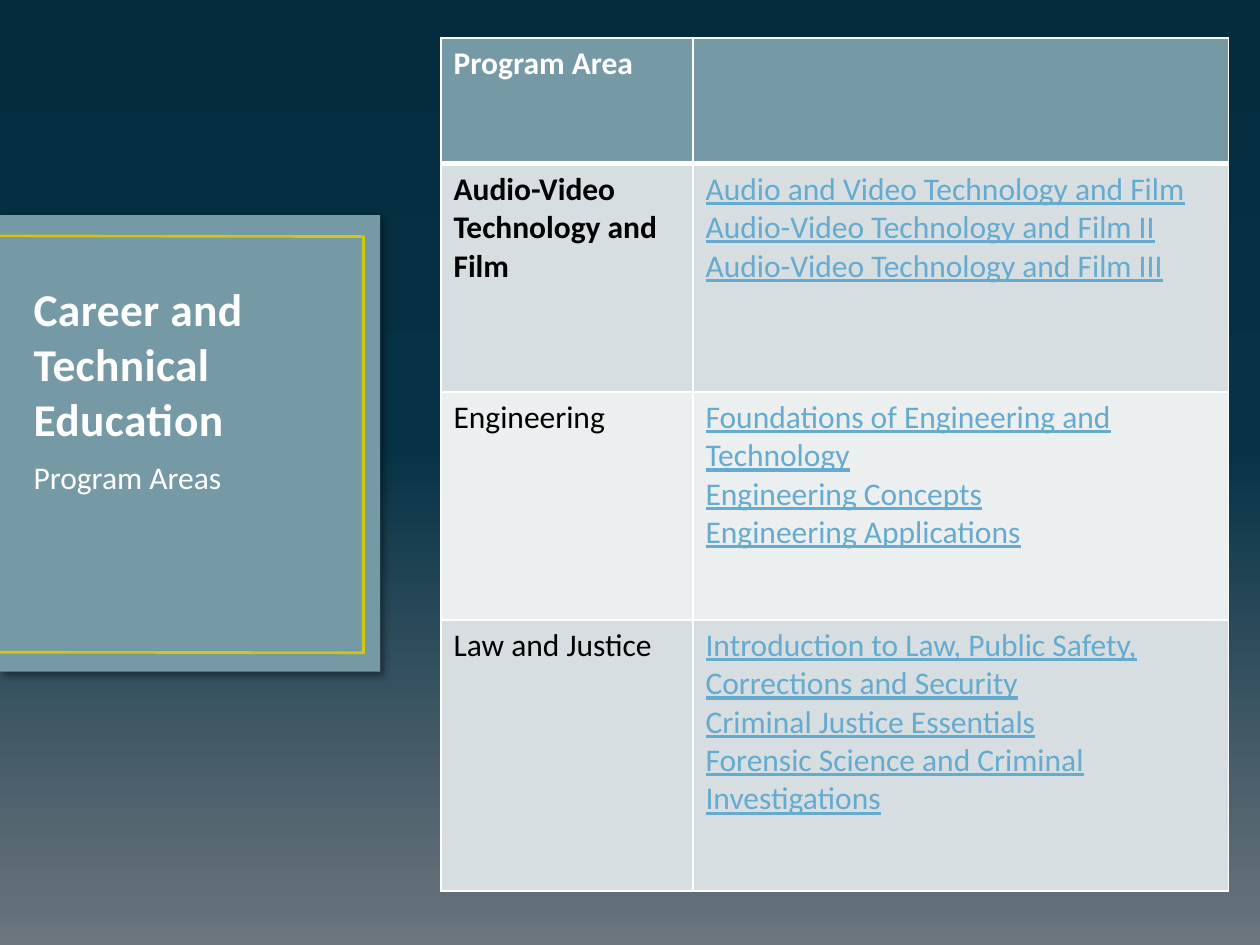
from lxml import etree
from pptx import Presentation
from pptx import util as u
from pptx.dml.color import RGBColor
from pptx.enum import shapes, text
from pptx.oxml import ns

WHITE = RGBColor(0xFF, 0xFF, 0xFF)
OFF_WHITE = RGBColor(0xFE, 0xFE, 0xFE)
BLACK = RGBColor(0, 0, 0)
TEAL = RGBColor(0x75, 0x9A, 0xA5)
GOLD = RGBColor(0xCF, 0xC6, 0x0D)
LINK_BLUE = RGBColor(0x66, 0xAA, 0xCD)
BAND_DARK = RGBColor(0xD6, 0xDE, 0xE1)
BAND_LIGHT = RGBColor(0xEC, 0xEF, 0xF0)
GRADIENT = [
    (0, RGBColor(0x6B, 0x75, 0x7D)),
    (53, RGBColor(0x06, 0x32, 0x45)),
    (100, RGBColor(0x05, 0x2C, 0x3D)),
]

COLUMN_WIDTHS = [144, 306]
ROW_HEIGHTS = [72, 130.32, 130.32, 154.8]
PROGRAMS = [
    ("Audio-Video Technology and Film", [
        "Audio and Video Technology and Film",
        "Audio-Video Technology and Film II",
        "Audio-Video Technology and Film III",
    ]),
    ("Engineering", [
        "Foundations of Engineering and Technology",
        "Engineering Concepts",
        "Engineering Applications",
    ]),
    ("Law and Justice", [
        "Introduction to Law, Public Safety, Corrections and Security",
        "Criminal Justice Essentials",
        "Forensic Science and Criminal Investigations",
    ]),
]


def add_xml(parent, tag, **attributes):
    element = etree.SubElement(parent, ns.qn(tag))
    for name, value in attributes.items():
        element.set(name, str(value))
    return element


class SlideBuilder:
    font = "Calibri"
    size = 18

    def __init__(self, slide):
        self.slide = slide

    def background(self, stops):
        fill = self.slide.background.fill
        fill.gradient()
        fill.gradient_angle = 90
        stop_list = next(self.slide.element.iter(ns.qn("a:gsLst")))
        for stop in list(stop_list):
            stop_list.remove(stop)
        for position, color in stops:
            stop = add_xml(stop_list, "a:gs", pos=position * 1000)
            add_xml(stop, "a:srgbClr", val=color)

    def panel(self, left, top, width, height, color):
        shape = self.slide.shapes.add_shape(
            shapes.MSO_SHAPE.RECTANGLE,
            u.Pt(left), u.Pt(top), u.Pt(width), u.Pt(height))
        shape.shadow.inherit = False
        shape.fill.solid()
        shape.fill.fore_color.rgb = color
        shape.line.fill.background()
        effects = shape.element.spPr.find(ns.qn("a:effectLst"))
        shadow = add_xml(effects, "a:outerShdw", blurRad=u.Pt(4), dist=u.Pt(3),
                         dir=45 * 60000, algn="tl", rotWithShape=0)
        shade = add_xml(shadow, "a:srgbClr", val=BLACK)
        add_xml(shade, "a:alpha", val=40000)

    def line(self, x1, y1, x2, y2, color):
        connector = self.slide.shapes.add_connector(
            shapes.MSO_CONNECTOR.STRAIGHT,
            u.Pt(x1), u.Pt(y1), u.Pt(x2), u.Pt(y2))
        connector.line.color.rgb = color
        connector.line.width = u.Pt(1.5)
        add_xml(connector.element.spPr, "a:effectLst")

    def run(self, paragraph, words, color, size=None, bold=False, underline=False):
        run = paragraph.add_run()
        run.text = words
        run.font.name = self.font
        run.font.size = u.Pt(size or self.size)
        run.font.bold = bold
        run.font.underline = underline
        run.font.color.rgb = color
        return run

    def placeholder(self, shape, left, top, width, height, anchor):
        shape.left, shape.top = u.Pt(left), u.Pt(top)
        shape.width, shape.height = u.Pt(width), u.Pt(height)
        frame = shape.text_frame
        frame.word_wrap = True
        frame.auto_size = text.MSO_AUTO_SIZE.NONE
        frame.vertical_anchor = anchor
        paragraph = frame.paragraphs[0]
        paragraph.alignment = text.PP_ALIGN.LEFT
        self.slide.shapes.element.append(shape.element)
        return paragraph

    def title(self, words, *box):
        paragraph = self.placeholder(
            self.slide.shapes.title, *box, text.MSO_ANCHOR.BOTTOM)
        run = self.run(paragraph, words, OFF_WHITE, size=26, bold=True)
        run.font._element.set("spc", "20")

    def body(self, words, *box):
        paragraph = self.placeholder(
            self.slide.placeholders[1], *box, text.MSO_ANCHOR.TOP)
        properties = paragraph._p.get_or_add_pPr()
        properties.set("marL", "0")
        properties.set("indent", "0")
        add_xml(properties, "a:buNone")
        self.run(paragraph, words, WHITE)

    def table(self, left, top, widths, heights):
        frame = self.slide.shapes.add_table(
            len(heights), len(widths), u.Pt(left), u.Pt(top),
            u.Pt(sum(widths)), u.Pt(sum(heights)))
        table = frame.table
        for column, width in zip(table.columns, widths):
            column.width = u.Pt(width)
        for row, height in zip(table.rows, heights):
            row.height = u.Pt(height)
        return table

    def cell(self, cell, lines, fill, color, top=1, bottom=1, **style):
        properties = cell._tc.get_or_add_tcPr()
        for tag, width in (("a:lnL", 1), ("a:lnR", 1), ("a:lnT", top), ("a:lnB", bottom)):
            border = add_xml(properties, tag, w=u.Pt(width))
            add_xml(add_xml(border, "a:solidFill"), "a:srgbClr", val=WHITE)
        cell.fill.solid()
        cell.fill.fore_color.rgb = fill
        frame = cell.text_frame
        for index, words in enumerate(lines):
            paragraph = frame.add_paragraph() if index else frame.paragraphs[0]
            self.run(paragraph, words, color, **style)


def main():
    presentation = Presentation()
    presentation.slide_width, presentation.slide_height = u.Pt(720), u.Pt(540)
    slide = presentation.slides.add_slide(presentation.slide_layouts[1])
    builder = SlideBuilder(slide)

    builder.background(GRADIENT)
    builder.panel(0, 123, 217.3, 260.8, TEAL)
    builder.line(207.7, 135, 207.7, 372.5, GOLD)
    builder.line(0, 134.8, 208.5, 135.2, GOLD)
    builder.line(0, 372.7, 208.5, 373, GOLD)

    table = builder.table(252, 21.6, COLUMN_WIDTHS, ROW_HEIGHTS)
    builder.cell(table.cell(0, 0), ["Program Area"], TEAL, WHITE, bottom=3, bold=True)
    builder.cell(table.cell(0, 1), [], TEAL, WHITE, bottom=3)
    for row, (area, courses) in enumerate(PROGRAMS, start=1):
        fill = BAND_DARK if row % 2 else BAND_LIGHT
        top = 3 if row == 1 else 1
        builder.cell(table.cell(row, 0), [area], fill, BLACK, top=top, bold=row == 1)
        builder.cell(table.cell(row, 1), courses, fill, LINK_BLUE, top=top, underline=True)

    builder.title("Career and Technical Education", 12, 150, 187.2, 108)
    builder.body("Program Areas", 12, 258, 187.2, 108)
    presentation.save("out.pptx")


if __name__ == "__main__":
    main()
